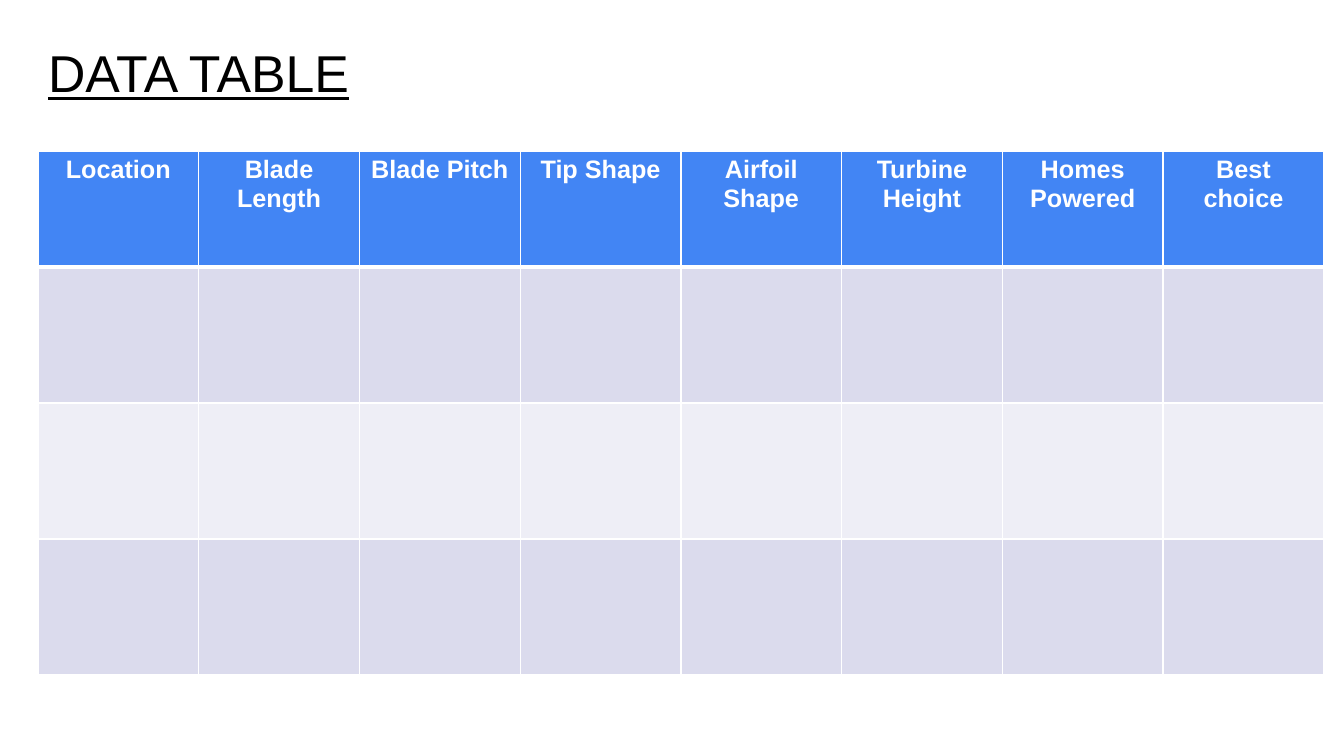
from dataclasses import dataclass

from lxml.etree import SubElement
from pptx import Presentation
from pptx.dml.color import RGBColor
from pptx.enum.text import MSO_ANCHOR, PP_ALIGN
from pptx.oxml.ns import qn
from pptx.util import Emu, Pt

EMU_PER_PX = 914400 / 100.8


@dataclass(frozen=True)
class Theme:
    font: str = "Arial"
    title_size: int = 37
    header_size: int = 18
    ink: str = "000000"
    white: str = "FFFFFF"
    header_fill: str = "4285F4"
    bands: tuple = ("DBDBED", "EEEEF6")
    thin: int = 1
    thick: int = 3


THEME = Theme()
HEADERS = ["Location", "Blade Length", "Blade Pitch", "Tip Shape",
           "Airfoil Shape", "Turbine Height", "Homes Powered", "Best choice"]
ROW_HEIGHTS = [116, 136, 136, 136]


def px(n):
    return Emu(round(n * EMU_PER_PX))


def write(tf, text, color, align=PP_ALIGN.LEFT, **formats):
    p = tf.paragraphs[0]
    p.alignment = align
    r = p.add_run()
    r.text = text
    r.font.color.rgb = RGBColor.from_string(color)
    for name, value in {"name": THEME.font, **formats}.items():
        setattr(r.font, name, value)


def add_title(s, text, left, top, width, height):
    tf = s.shapes.add_textbox(px(left), px(top), px(width), px(height)).text_frame
    layout = {"word_wrap": True, "vertical_anchor": MSO_ANCHOR.BOTTOM,
              "margin_left": 0, "margin_top": 0,
              "margin_right": 0, "margin_bottom": 0}
    for name, value in layout.items():
        setattr(tf, name, value)
    write(tf, text, THEME.ink, size=Pt(THEME.title_size), underline=True)


def set_borders(cell, widths):
    tc_pr = cell._tc.get_or_add_tcPr()
    for side, width in widths.items():
        ln = SubElement(tc_pr, qn(f"a:ln{side}"), w=str(Pt(width)))
        fill = SubElement(ln, qn("a:solidFill"))
        SubElement(fill, qn("a:srgbClr"), val=THEME.white)


def style_cell(cell, row):
    # Borders must precede the fill in the cell properties
    set_borders(cell, {"L": THEME.thin, "R": THEME.thin,
                       "T": THEME.thick if row == 1 else THEME.thin,
                       "B": THEME.thick if row == 0 else THEME.thin})
    color = THEME.bands[(row - 1) % 2] if row else THEME.header_fill
    cell.fill.solid()
    cell.fill.fore_color.rgb = RGBColor.from_string(color)


def add_data_table(s, headers, row_heights, left, top, width):
    table = s.shapes.add_table(len(row_heights), len(headers), px(left), px(top),
                               px(width), px(sum(row_heights))).table
    for i, height in enumerate(row_heights):
        table.rows[i].height = px(height)
        for cell in table.rows[i].cells:
            style_cell(cell, i)
    for cell, text in zip(table.rows[0].cells, headers):
        write(cell.text_frame, text, THEME.white, PP_ALIGN.CENTER,
              size=Pt(THEME.header_size), bold=True)


def main():
    prs = Presentation()
    prs.slide_width, prs.slide_height = px(1344), px(756)
    s = prs.slides.add_slide(prs.slide_layouts[6])

    # Title
    add_title(s, "DATA TABLE", 48, 28, 1081, 75)

    # Header row and empty banded rows
    add_data_table(s, HEADERS, ROW_HEIGHTS, 38, 151, 1286)

    prs.save("out.pptx")


if __name__ == "__main__":
    main()
